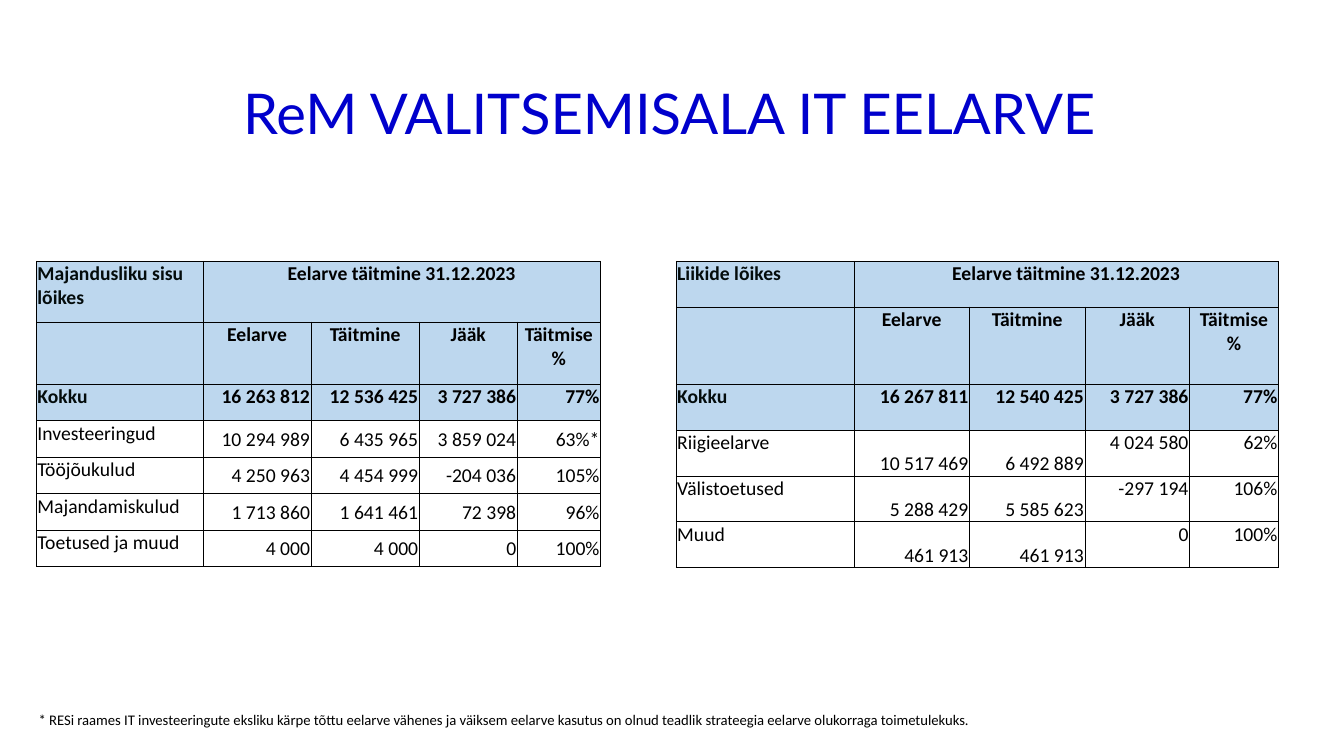
from lxml.etree import SubElement
from pptx import Presentation
from pptx.dml.color import RGBColor
from pptx.enum.text import MSO_ANCHOR, PP_ALIGN
from pptx.oxml.ns import qn
from pptx.util import Pt

COLORS = {
    "title": "0000CC",
    "text": "000000",
    "label": "040C0C",
    "header": "BDD7EE",
    "border": "000000",
}
HEADER_ROWS = 3
TABLE_TOP = 186.5
TOP, MIDDLE, BOTTOM = MSO_ANCHOR.TOP, MSO_ANCHOR.MIDDLE, MSO_ANCHOR.BOTTOM

PERIOD = "Eelarve täitmine 31.12.2023"
COLUMN_HEADS = ["", "Eelarve", "Täitmine", "Jääk", "Täitmise %"]

CONTENT_ROWS = [
    ["Majandusliku sisu lõikes", PERIOD, "", "", ""],
    COLUMN_HEADS,
    ["Kokku", "16 263 812", "12 536 425", "3 727 386", "77%"],
    ["Investeeringud", "10 294 989", "6 435 965", "3 859 024", "63%*"],
    ["Tööjõukulud", "4 250 963", "4 454 999", "-204 036", "105%"],
    ["Majandamiskulud", "1 713 860", "1 641 461", "72 398", "96%"],
    ["Toetused ja muud", "4 000", "4 000", "0", "100%"],
]
TYPE_ROWS = [
    ["Liikide lõikes", PERIOD, "", "", ""],
    COLUMN_HEADS,
    ["Kokku", "16 267 811", "12 540 425", "3 727 386", "77%"],
    ["Riigieelarve", "10 517 469", "6 492 889", "4 024 580", "62%"],
    ["Välistoetused", "5 288 429", "5 585 623", "-297 194", "106%"],
    ["Muud", "461 913", "461 913", "0", "100%"],
]
FOOTNOTE = (
    "* RESi raames IT investeeringute eksliku kärpe tõttu eelarve vähenes ja väiksem "
    "eelarve kasutus on olnud teadlik strateegia eelarve olukorraga toimetulekuks."
)


def style_text(p, size, color, font="Calibri", bold=False, align=PP_ALIGN.LEFT):
    p.alignment = align
    for r in p.runs:
        r.font.name = font
        r.font.size = Pt(size)
        r.font.bold = bold
        r.font.color.rgb = RGBColor.from_string(COLORS[color])


def add_text(s, box, text, size, color, font="Calibri", align=PP_ALIGN.LEFT, anchor=TOP):
    tf = s.shapes.add_textbox(*[Pt(v) for v in box]).text_frame
    tf.word_wrap = True
    tf.vertical_anchor = anchor
    tf.text = text
    p = tf.paragraphs[0]
    style_text(p, size, color, font, align=align)
    return p


def set_borders(cell):
    tc_pr = cell._tc.get_or_add_tcPr()
    for side in ("a:lnL", "a:lnR", "a:lnT", "a:lnB"):
        line = SubElement(tc_pr, qn(side), w=str(Pt(0.5)))
        fill = SubElement(line, qn("a:solidFill"))
        SubElement(fill, qn("a:srgbClr"), val=COLORS["border"])


def style_cell(cell, row, col, text, anchor):
    is_header = row < HEADER_ROWS
    cell.margin_left = cell.margin_right = cell.margin_top = Pt(0.75)
    cell.margin_bottom = Pt(0)
    cell.vertical_anchor = anchor

    # Borders come before the fill in the cell properties
    set_borders(cell)
    if is_header:
        cell.fill.solid()
        cell.fill.fore_color.rgb = RGBColor.from_string(COLORS["header"])
    else:
        cell.fill.background()

    if text:
        if col == 0:
            align = PP_ALIGN.LEFT
        else:
            align = PP_ALIGN.CENTER if row < 2 else PP_ALIGN.RIGHT
        cell.text_frame.text = text
        color = "label" if is_header and col == 0 else "text"
        style_text(cell.text_frame.paragraphs[0], 14, color, bold=is_header, align=align)


def add_budget_table(s, left, rows, widths, heights, body_anchors):
    table = s.shapes.add_table(
        len(rows), len(widths), Pt(left), Pt(TABLE_TOP), Pt(sum(widths)), Pt(sum(heights))
    ).table
    table.first_row = table.horz_banding = False
    for column, width in zip(table.columns, widths):
        column.width = Pt(width)
    for table_row, height in zip(table.rows, heights):
        table_row.height = Pt(height)
    for row, values in enumerate(rows):
        for col, text in enumerate(values):
            anchor = TOP if row < HEADER_ROWS else body_anchors[col]
            style_cell(table.cell(row, col), row, col, text, anchor)
    table.cell(0, 1).merge(table.cell(0, 4))


def main():
    prs = Presentation()
    prs.slide_width, prs.slide_height = Pt(960), Pt(540)
    s = prs.slides.add_slide(prs.slide_layouts[6])

    # Title
    title = add_text(s, (26, 31, 914.5, 104.5), "ReM VALITSEMISALA IT EELARVE ", 40.1,
                     "title", "Lato", PP_ALIGN.CENTER, MIDDLE)
    title.line_spacing = 0.9

    # Budget by content and by type
    add_budget_table(s, 26, CONTENT_ROWS, [119, 77.25, 77.25, 70, 59.5],
                     [43.5, 44.5] + [26.1] * 5, [TOP] + [MIDDLE] * 4)
    add_budget_table(s, 483, TYPE_ROWS, [127, 82.5, 82.5, 74.75, 63.5],
                     [32.75, 55.25] + [32.75] * 4, [TOP, BOTTOM, BOTTOM, TOP, TOP])

    # Footnote
    add_text(s, (20.5, 504, 729.5, 20), FOOTNOTE, 10.5, "text")

    prs.save("out.pptx")


if __name__ == "__main__":
    main()
